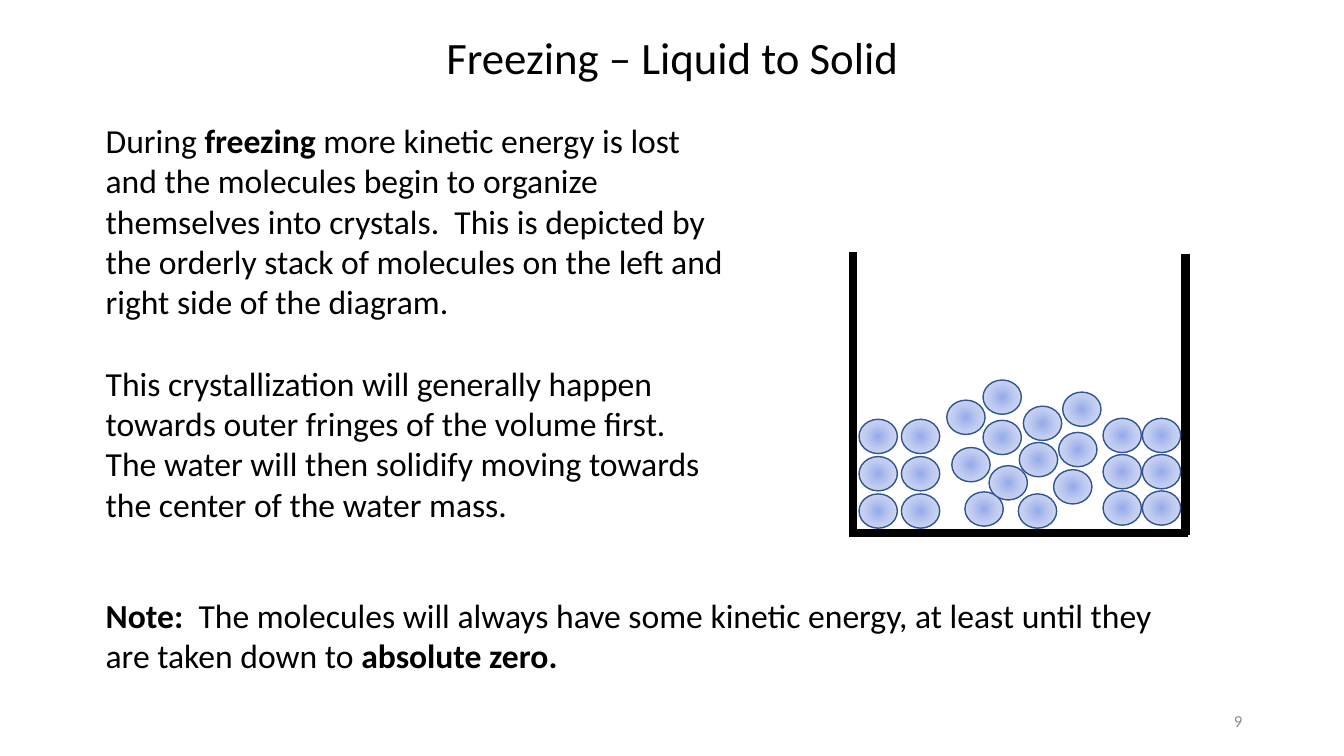
"""Build the slide on freezing, with molecules settling in a container."""
from itertools import product

from pptx import Presentation
from pptx.dml.color import RGBColor
from pptx.enum.shapes import MSO_CONNECTOR as CONNECTOR, MSO_SHAPE as SHAPE
from pptx.enum.text import MSO_ANCHOR as ANCHOR, PP_ALIGN as ALIGN
from pptx.oxml import parse_xml
from pptx.oxml.ns import nsdecls, qn
from pptx.util import Inches, Pt

FONT = "Calibri"
BLACK, GREY, OUTLINE = "000000", "8C8C8C", "325491"
GLOW = [(0, "96ABEA"), (50, "C0CBF0"), (100, "E0E5F7")]

TITLE = [[("Freezing – Liquid to Solid", False)]]
EXPLANATION = [
    [("During ", False), ("freezing", True),
     (" more kinetic energy is lost and the molecules begin to organize "
      "themselves into crystals.  This is depicted by the orderly stack of "
      "molecules on the left and right side of the diagram.", False)],
    [("This crystallization will generally happen towards outer fringes of "
      "the volume first.  The water will then solidify moving towards the "
      "center of the water mass.", False)],
]
NOTE = [[("Note:", True),
         ("  The molecules will always have some kinetic energy, at least "
          "until they are taken down to ", False),
         ("absolute zero.", True)]]
PAGE_NUMBER = [[("9", False)]]

CONTAINER = [(8.46, 2.5, 8.46, 5.29), (8.42, 5.29, 11.78, 5.29),
             (11.76, 2.52, 11.76, 5.31)]
MOLECULE_SIZE = (0.38, 0.34)
CRYSTAL_ROWS = 3
CRYSTALS = [
    {"columns": (8.52, 8.94), "top": 4.16, "pitch": 0.37},
    {"columns": (10.94, 11.33), "top": 4.15, "pitch": 0.36},
]
LIQUID = [(9.57, 4.88), (9.44, 4.44), (10.1, 4.9), (9.81, 4.62),
          (10.45, 4.66), (10.11, 4.39), (9.75, 4.17), (9.39, 3.97),
          (10.15, 4.03), (9.75, 3.77), (10.5, 4.29), (10.54, 3.89)]


def rgb(color):
    return RGBColor.from_string(color)


def add_text(slide, box, paragraphs, size, color=BLACK, align=ALIGN.LEFT,
             anchor=ANCHOR.TOP):
    frame = slide.shapes.add_textbox(*map(Inches, box)).text_frame
    frame.word_wrap = True
    frame.vertical_anchor = anchor
    for index, runs in enumerate(paragraphs):
        paragraph = frame.add_paragraph() if index else frame.paragraphs[0]
        paragraph.alignment = align
        paragraph.font.name = FONT
        paragraph.font.size = Pt(size)
        paragraph.font.color.rgb = rgb(color)
        if index:
            paragraph.space_before = Pt(size * 1.22)
        for words, bold in runs:
            run = paragraph.add_run()
            run.text = words
            run.font.bold = bold


def add_wall(slide, ends):
    wall = slide.shapes.add_connector(CONNECTOR.STRAIGHT, *map(Inches, ends))
    wall.line.color.rgb = rgb(BLACK)
    wall.line.width = Pt(6)
    wall._element.spPr.append(parse_xml(f"<a:effectLst {nsdecls('a')}/>"))


def add_molecule(slide, left, top):
    molecule = slide.shapes.add_shape(
        SHAPE.OVAL, *map(Inches, (left, top, *MOLECULE_SIZE)))
    molecule.shadow.inherit = False
    molecule.line.color.rgb = rgb(OUTLINE)
    molecule.line.width = Pt(1)
    molecule.fill.background()
    stops = "".join(f'<a:gs pos="{pos * 1000}"><a:srgbClr val="{color}"/></a:gs>'
                    for pos, color in GLOW)
    glow = parse_xml(
        f'<a:gradFill {nsdecls("a")} rotWithShape="1"><a:gsLst>{stops}</a:gsLst>'
        '<a:path path="circle"><a:fillToRect l="50000" t="50000" r="50000" '
        'b="50000"/></a:path></a:gradFill>')
    properties = molecule._element.spPr
    properties.replace(properties.find(qn("a:noFill")), glow)


def main():
    deck = Presentation()
    deck.slide_width, deck.slide_height = Inches(13.33), Inches(7.5)
    slide = deck.slides.add_slide(deck.slide_layouts[6])

    add_text(slide, (3.32, 0.25, 6.7, 0.64), TITLE, 32, align=ALIGN.CENTER)
    add_text(slide, (0.95, 1.14, 6.36, 4.14), EXPLANATION, 24)
    for ends in CONTAINER:
        add_wall(slide, ends)
    for crystal in CRYSTALS:
        for left, row in product(crystal["columns"], range(CRYSTAL_ROWS)):
            add_molecule(slide, left, crystal["top"] + row * crystal["pitch"])
    for left, top in LIQUID:
        add_molecule(slide, left, top)
    add_text(slide, (9.42, 6.95, 3, 0.4), PAGE_NUMBER, 12, GREY,
             ALIGN.RIGHT, ANCHOR.MIDDLE)
    add_text(slide, (0.95, 5.85, 10.97, 0.91), NOTE, 24)
    deck.save("out.pptx")


if __name__ == "__main__":
    main()
